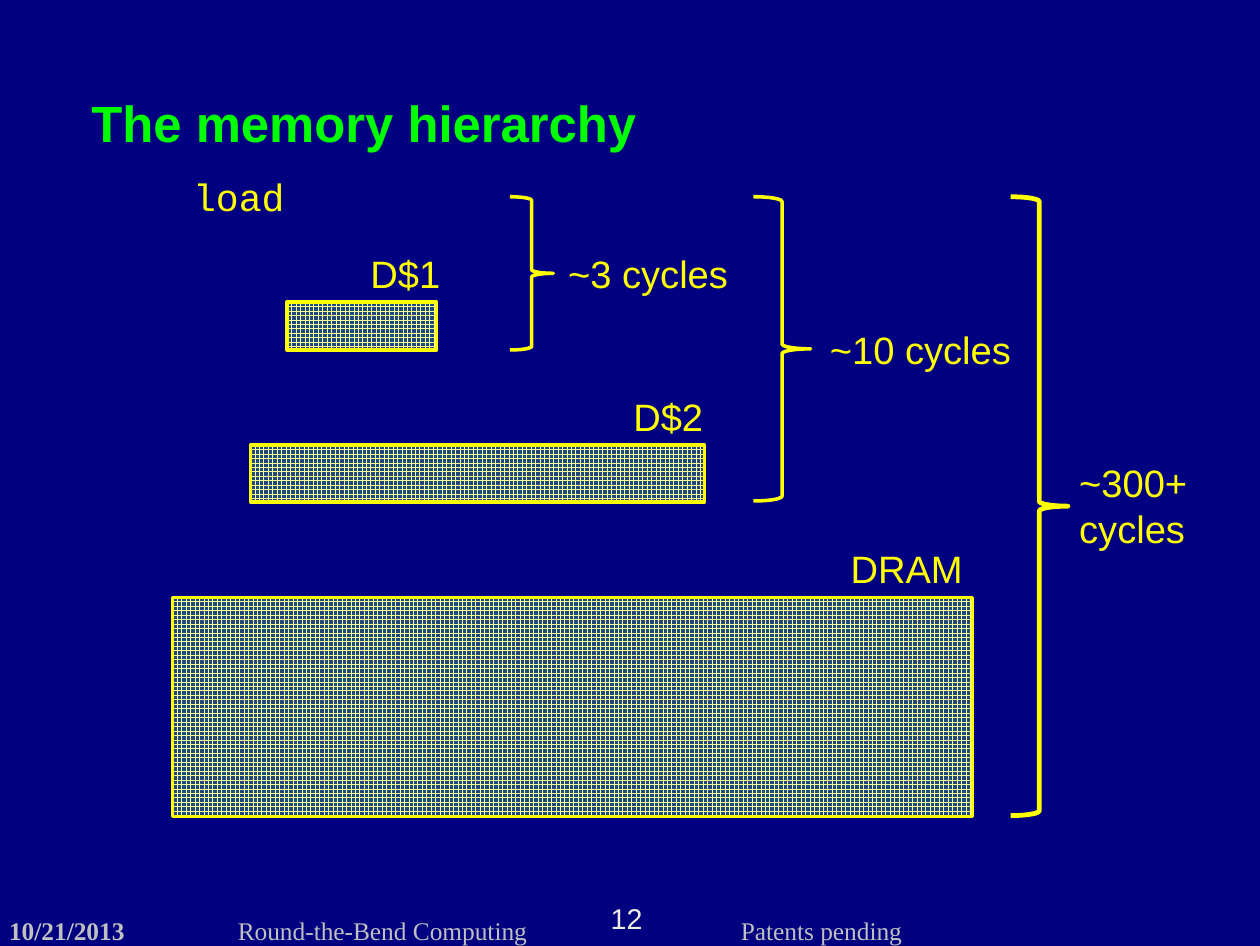
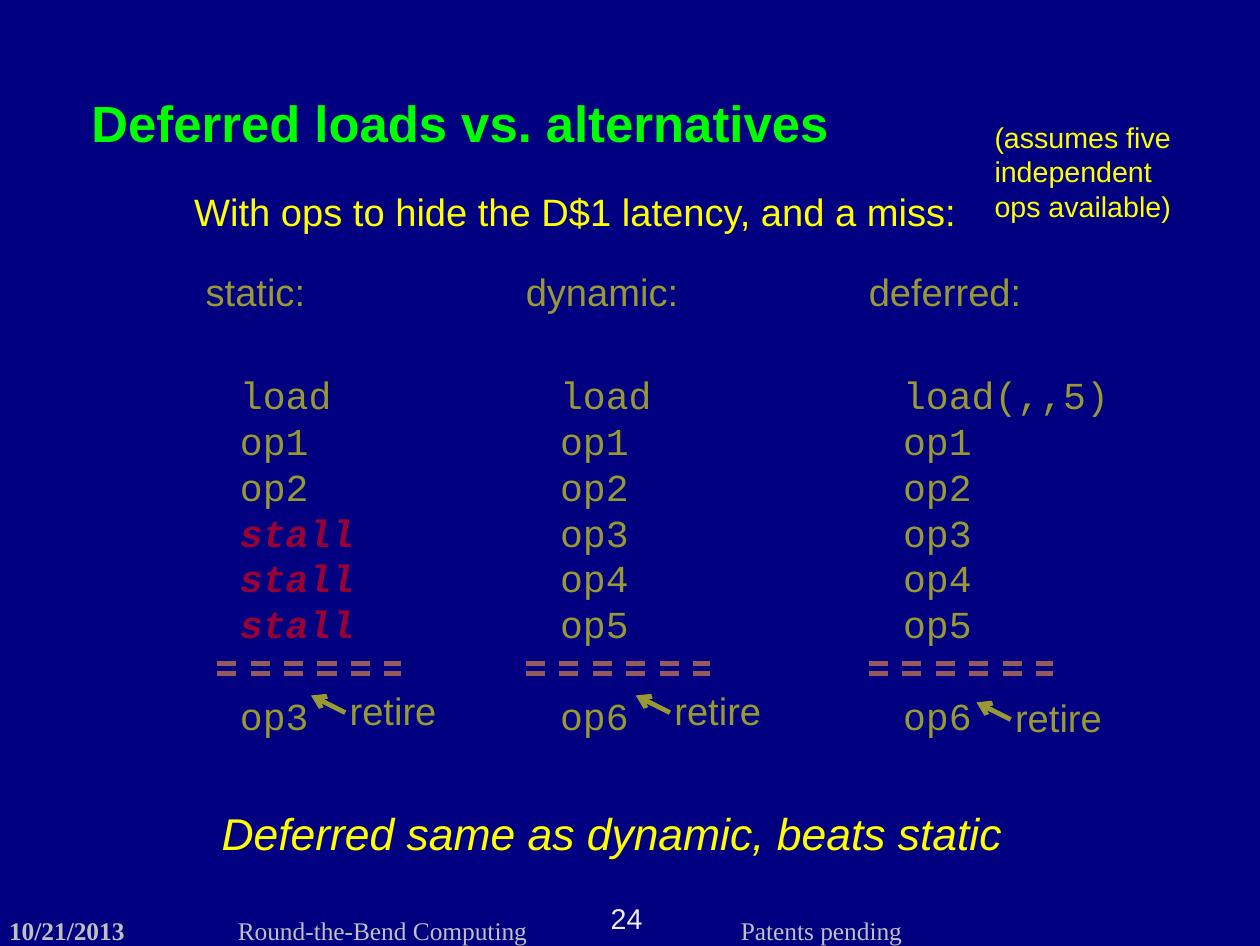
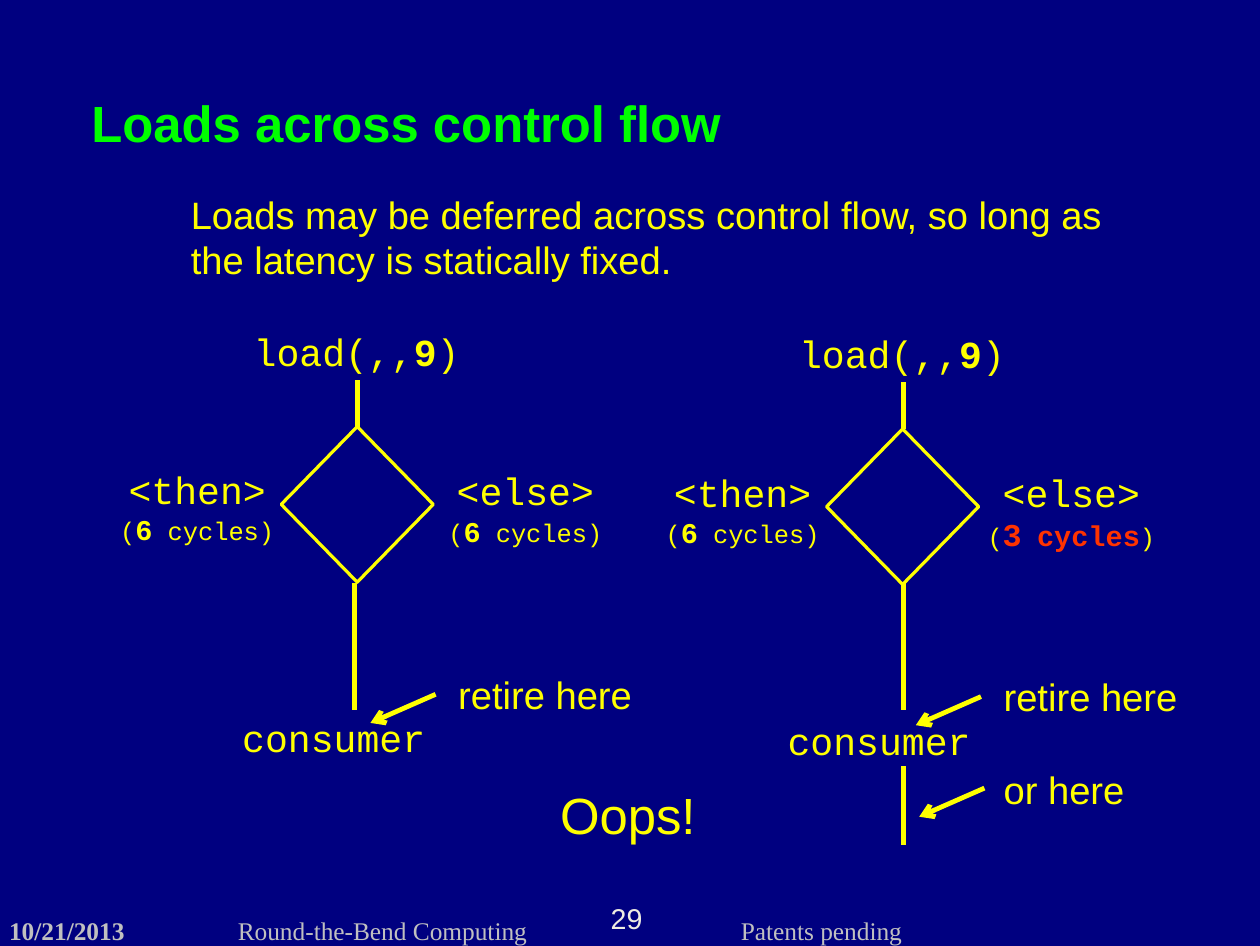
import dataclasses

import lxml.etree
import pptx
import pptx.dml.color
import pptx.enum.dml
import pptx.enum.shapes
import pptx.enum.text
import pptx.oxml.ns
import pptx.util

PX = 9144
qn = pptx.oxml.ns.qn
Kind = pptx.enum.shapes.MSO_SHAPE


@dataclasses.dataclass(frozen=True)
class Theme:
    navy: str = "000080"
    green: str = "00FF00"
    yellow: str = "FFFF00"
    cream: str = "FFFF99"
    steel: str = "1F497D"
    orange: str = "F79646"
    red: str = "FF0000"
    scarlet: str = "FF3300"
    silver: str = "C0C0C0"
    ivory: str = "EEECE1"
    sans: str = "Arial"
    mono: str = "Courier New"
    serif: str = "Times New Roman"
    title: int = 32
    closing: int = 28
    body: int = 24
    emphasis: int = 20
    note: int = 18
    small: int = 16
    leading: float = 1.2


THEME = Theme()

FOOTERS = [
    ("10/21/2013", 8, 160, True),
    ("Round-the-Bend Computing", 208, 310, False),
    ("Patents pending", 648, 200, False),
]

MEMORIES = [
    ("D$1", (314, 214, 82), (251, 264, 131, 42)),
    ("D$2", (544, 339, 82), (219, 389, 397, 50)),
    ("DRAM", (734, 472, 119), (151, 522, 700, 192)),
]
LATENCIES = [
    ("~3 cycles", (487, 214, 161, 50), (446, 172, 38, 134), 2.25, False),
    ("~10 cycles", (716, 280, 180, 50), (659, 172, 50, 266), 2.25, False),
    ("~300+ cycles", (934, 397, 117, 91), (884, 172, 50, 541), 3, True),
]

STALL = [("stall", dict(color=THEME.red, bold=True, italic=True))]
SCHEDULES = [
    dict(name="static:", left=170, widths=(108, 121), retire=(302, 623),
         code=["load", "op1", "op2", STALL, STALL, STALL, "op3"],
         veil=(123, 222, 323, 452)),
    dict(name="dynamic:", left=450, widths=(155, 101), retire=(586, 623),
         code=["load", "op1", "op2", "op3", "op4", "op5", "op6"],
         veil=(447, 235, 288, 449)),
    dict(name="deferred:", left=750, widths=(155, 202), retire=(884, 629),
         code=["load(,,5)", "op1", "op2", "op3", "op4", "op5", "op6"],
         veil=(750, 218, 288, 449)),
]

SMALL = dict(size=THEME.small)
LOAD = [[("load(,,", {}), ("9", dict(bold=True)), (")", {})]]
SIX_CYCLES = [("(", SMALL), ("6", dict(size=THEME.note, bold=True)), (" cycles)", SMALL)]
THREE_CYCLES = [
    ("(", SMALL),
    ("3", dict(size=THEME.emphasis, bold=True, color=THEME.scarlet)),
    (" ", SMALL),
    ("cycles", dict(size=THEME.note, bold=True, color=THEME.scarlet)),
    (")", SMALL),
]
FLOWS = [
    dict(shift=(0, 0), exit=310, other=SIX_CYCLES, other_at=(381, 404, 157, 81)),
    dict(shift=(477, 2), exit=790, other=THREE_CYCLES, other_at=(853, 405, 168, 84)),
]


def rgb(code):
    return pptx.dml.color.RGBColor.from_string(code)


def scaled(*lengths):
    return [pptx.util.Emu(length * PX) for length in lengths]


def write(page, text, at, *, size=THEME.body, font=THEME.sans, color=THEME.yellow,
          bold=False, italic=False, center=False, wrap=False, inset=True, last_gap=0):
    box = page.shapes.add_textbox(*scaled(*at))
    frame = box.text_frame
    frame.word_wrap = wrap
    if not inset:
        frame.margin_left = frame.margin_right = frame.margin_top = frame.margin_bottom = 0
    lines = [text] if isinstance(text, str) else text
    for index, line in enumerate(lines):
        para = frame.add_paragraph() if index else frame.paragraphs[0]
        spans = [(line, {})] if isinstance(line, str) else line
        largest = max(style.get("size", size) for _, style in spans)
        para.line_spacing = pptx.util.Pt(round(largest * THEME.leading, 1))
        if center:
            para.alignment = pptx.enum.text.PP_ALIGN.CENTER
        if last_gap and index == len(lines) - 1:
            para.space_before = pptx.util.Pt(last_gap)
        for words, style in spans:
            span = para.add_run()
            span.text = words
            span.font.name = font
            span.font.size = pptx.util.Pt(style.get("size", size))
            span.font.bold = style.get("bold", bold)
            span.font.italic = style.get("italic", italic)
            span.font.color.rgb = rgb(style.get("color", color))


def draw(page, kind, at, weight=0):
    shape = page.shapes.add_shape(kind, *scaled(*at))
    shape.shadow.inherit = False
    shape.fill.background()
    if weight:
        shape.line.color.rgb = rgb(THEME.yellow)
        shape.line.width = pptx.util.Pt(weight)
    else:
        shape.line.fill.background()
    return shape


def draw_memory(page, at):
    fill = draw(page, Kind.RECTANGLE, at, 2).fill
    fill.patterned()
    fill.pattern = pptx.enum.dml.MSO_PATTERN.LARGE_GRID
    fill.fore_color.rgb = rgb(THEME.cream)
    fill.back_color.rgb = rgb(THEME.steel)


def draw_veil(page, at):
    veil = draw(page, Kind.RECTANGLE, at)
    veil.fill.solid()
    veil.fill.fore_color.rgb = rgb(THEME.navy)
    tint = next(veil._element.spPr.iter(qn("a:srgbClr")))
    lxml.etree.SubElement(tint, qn("a:alpha"), val="40000")


def connect(page, start, end, color=THEME.yellow, arrow=False, dashed=False):
    line = page.shapes.add_connector(
        pptx.enum.shapes.MSO_CONNECTOR.STRAIGHT, *scaled(*start, *end))
    line.line.color.rgb = rgb(color)
    line.line.width = pptx.util.Pt(3)
    if dashed:
        line.line.dash_style = pptx.enum.dml.MSO_LINE.DASH
    properties = line._element.spPr
    if arrow:
        lxml.etree.SubElement(properties.find(qn("a:ln")), qn("a:tailEnd"), type="arrow")
    lxml.etree.SubElement(properties, qn("a:effectLst"))


def new_page(deck, title, width, number):
    page = deck.slides.add_slide(deck.slide_layouts[6])
    for text, left, span, bold in FOOTERS:
        write(page, text, (left, 800, span, 25), size=THEME.small, font=THEME.serif,
              color=THEME.silver, bold=bold, wrap=True, inset=False)
    write(page, number, (523, 788, 50, 29), size=THEME.note, color=THEME.ivory,
          center=True, wrap=True, inset=False)
    write(page, title, (80, 80, width, 52), size=THEME.title, color=THEME.green,
          bold=True, inset=False)
    return page


def build_hierarchy(deck):
    page = new_page(deck, "The memory hierarchy", 481, "12")
    write(page, "load", (159, 147, 101, 50), font=THEME.mono)
    for name, (left, top, width), block in MEMORIES:
        draw_memory(page, block)
        write(page, name, (left, top, width, 50))
    for text, label, brace, weight, wrap in LATENCIES:
        draw(page, Kind.RIGHT_BRACE, brace, weight)
        write(page, text, label, wrap=wrap)


def build_alternatives(deck):
    page = new_page(deck, "Deferred loads vs. alternatives", 651, "24")
    write(page, "With ops to hide the D$1 latency, and a miss:", (160, 160, 701, 50), wrap=True)
    write(page, "(assumes five independent ops available)", (860, 100, 200, 101),
          size=THEME.note, wrap=True)
    write(page, "Deferred same as dynamic, beats static", (184, 700, 704, 57),
          size=THEME.closing, italic=True)
    for schedule in SCHEDULES:
        left = schedule["left"]
        name_width, code_width = schedule["widths"]
        write(page, schedule["name"], (left, 230, name_width, 50))
        write(page, schedule["code"], (left + 30, 320, code_width, 333),
              font=THEME.mono, last_gap=28.8)
        x, y = schedule["retire"]
        connect(page, (x, y), (x - 30, y - 15), arrow=True)
        write(page, "retire", (x - 6, y - 27, 97, 50))
        rule = left + (20 if schedule is SCHEDULES[0] else 10)
        for height in (580, 589):
            connect(page, (rule, height), (rule + 161, height), THEME.orange, dashed=True)
    for schedule in SCHEDULES:
        draw_veil(page, schedule["veil"])


def build_control_flow(deck):
    page = new_page(deck, "Loads across control flow", 556, "29")
    write(page, "Loads may be deferred across control flow, so long as "
          "the latency is statically fixed.", (157, 162, 842, 91), wrap=True)
    for flow in FLOWS:
        dx, dy = flow["shift"]
        write(page, LOAD, (212 + dx, 282 + dy, 202, 50), font=THEME.mono)
        connect(page, (313 + dx, 373 + dy), (313 + dx, 332 + dy))
        draw(page, Kind.DIAMOND, (246 + dx, 373 + dy, 133, 136), 2)
        write(page, ["<then>", SIX_CYCLES], (94 + dx, 403 + dy, 157, 81),
              font=THEME.mono, center=True)
        write(page, ["<else>", flow["other"]], flow["other_at"], font=THEME.mono, center=True)
        connect(page, (flow["exit"], 510), (flow["exit"], 621))
        write(page, "consumer", (202 + dx, 620 + dy, 181, 50), font=THEME.mono)
        connect(page, (381 + dx, 607 + dy), (324 + dx, 632 + dy), arrow=True)
        write(page, "retire here", (391 + dx, 582 + dy, 174, 50))
    connect(page, (790, 670), (790, 739))
    connect(page, (861, 689), (804, 714), arrow=True)
    write(page, "or here", (868, 665, 127, 50))
    write(page, "Oops!", (480, 680, 140, 64), size=THEME.title)


def main():
    deck = pptx.Presentation()
    deck.slide_width, deck.slide_height = scaled(1102, 827)
    background = deck.slide_master.background.fill
    background.solid()
    background.fore_color.rgb = rgb(THEME.navy)
    build_hierarchy(deck)
    build_alternatives(deck)
    build_control_flow(deck)
    deck.save("out.pptx")


if __name__ == "__main__":
    main()
